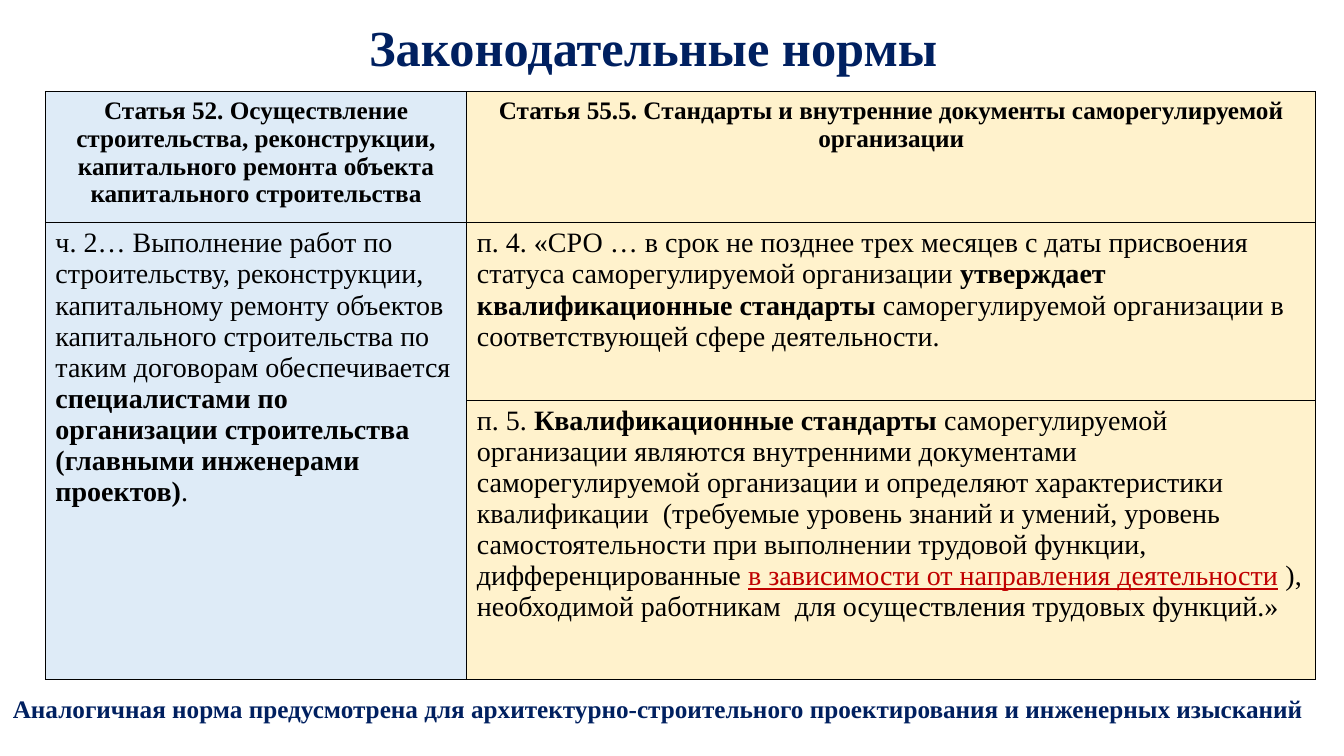
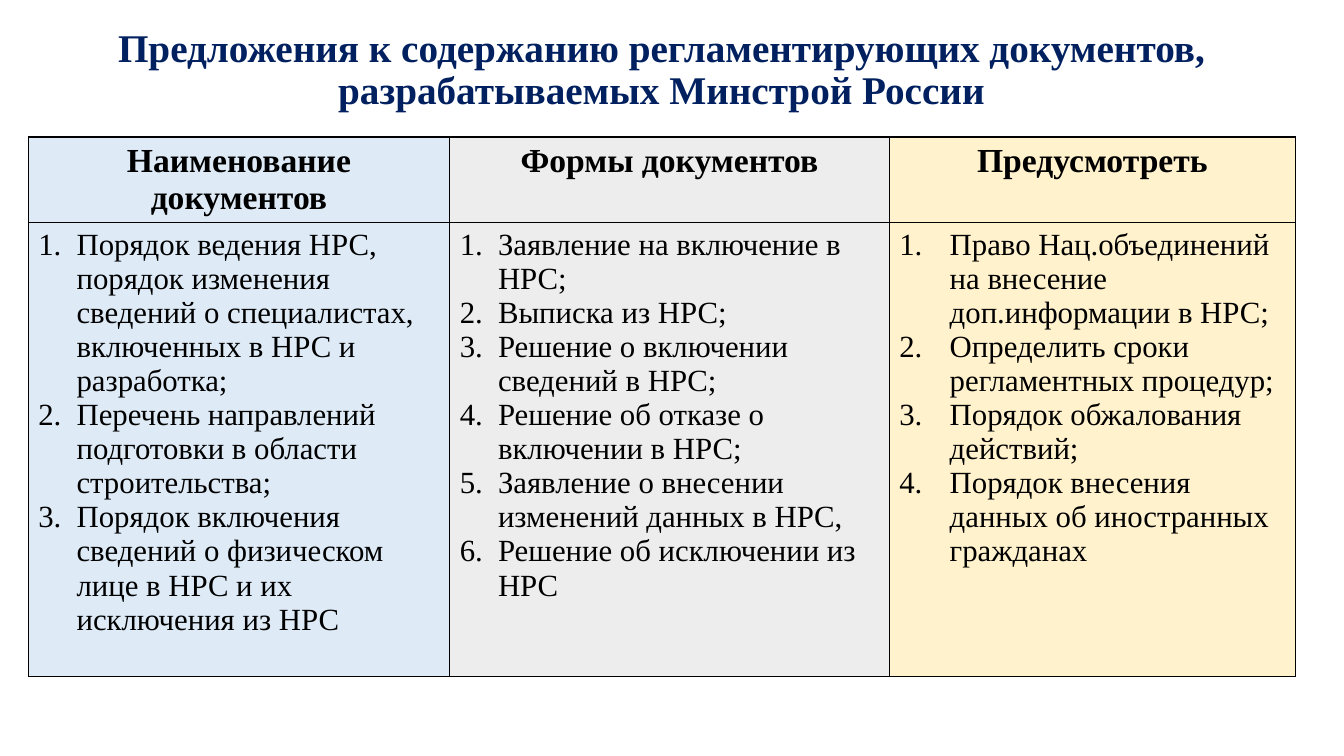
from lxml.etree import SubElement
from pptx import Presentation
from pptx.dml.color import RGBColor
from pptx.enum.text import MSO_ANCHOR, MSO_AUTO_SIZE, PP_ALIGN
from pptx.oxml.ns import qn
from pptx.util import Inches, Pt

COLORS = {
    "navy": "002060",
    "black": "000000",
    "red": "C00000",
    "blue": "DEEBF7",
    "gray": "EDEDED",
    "yellow": "FFF2CC",
}
FONT = "Times New Roman"


class Deck:
    """Holds the shared style and the current slide."""

    def __init__(self):
        self.presentation = Presentation()
        self.presentation.slide_width = Inches(13.33)
        self.presentation.slide_height = Inches(7.5)
        self.slide = None

    def add_run(self, paragraph, text, size, color="black", bold=False, underline=False):
        run = paragraph.add_run()
        run.text = text
        font = run.font
        font.name, font.size = FONT, Pt(size)
        font.bold, font.underline = bold, underline
        font.color.rgb = RGBColor.from_string(COLORS[color])

    def new_slide(self, title, left, top, size):
        self.slide = self.presentation.slides.add_slide(self.presentation.slide_layouts[5])
        shape = self.slide.shapes.title
        shape.left, shape.top = Inches(left), Inches(top)
        shape.width, shape.height = Inches(11.5), Inches(0.47)
        frame = shape.text_frame
        frame.auto_size = MSO_AUTO_SIZE.NONE
        frame.vertical_anchor = MSO_ANCHOR.BOTTOM
        paragraph = frame.paragraphs[0]
        paragraph.alignment = PP_ALIGN.CENTER
        paragraph.line_spacing = 0.9
        self.add_run(paragraph, title, size, "navy", bold=True)

    def add_note_line(self, text, left, top, width, height):
        shape = self.slide.shapes.add_textbox(
            Inches(left), Inches(top), Inches(width), Inches(height))
        shape.text_frame.word_wrap = True
        paragraph = shape.text_frame.paragraphs[0]
        paragraph.alignment = PP_ALIGN.CENTER
        self.add_run(paragraph, text, 18, "navy", bold=True)

    def add_table(self, left, top, widths, heights, fills):
        """Add a bordered table with one fill per column."""
        table = self.slide.shapes.add_table(
            len(heights), len(widths), Inches(left), Inches(top),
            Inches(sum(widths)), Inches(sum(heights))).table
        table.first_row = table.horz_banding = False
        for column, width in zip(table.columns, widths):
            column.width = Inches(width)
        for row, height in zip(table.rows, heights):
            row.height = Inches(height)
            for cell, fill in zip(row.cells, fills):
                self.add_borders(cell)
                cell.fill.solid()
                cell.fill.fore_color.rgb = RGBColor.from_string(COLORS[fill])
        return table

    def add_borders(self, cell):
        properties = cell._tc.get_or_add_tcPr()
        for side in ("lnL", "lnR", "lnT", "lnB"):
            line = SubElement(properties, qn(f"a:{side}"), w=str(Pt(1)))
            fill = SubElement(line, qn("a:solidFill"))
            SubElement(fill, qn("a:srgbClr"), val=COLORS["black"])

    def fill_header(self, table, titles, size):
        for cell, title in zip(table.rows[0].cells, titles):
            paragraph = cell.text_frame.paragraphs[0]
            paragraph.alignment = PP_ALIGN.CENTER
            self.add_run(paragraph, title, size, bold=True)

    def fill_text(self, cell, runs, size):
        for text, style in runs:
            self.add_run(cell.text_frame.paragraphs[0], text, size, **style)

    def fill_list(self, cell, items, size, indent):
        """Write a numbered list with a hanging indent."""
        frame = cell.text_frame
        for index, item in enumerate(items):
            paragraph = frame.add_paragraph() if index else frame.paragraphs[0]
            properties = paragraph._p.get_or_add_pPr()
            properties.set("marL", str(Inches(indent)))
            properties.set("indent", str(-Inches(indent)))
            SubElement(properties, qn("a:buFont"), typeface=FONT)
            SubElement(properties, qn("a:buAutoNum"), type="arabicPeriod")
            self.add_run(paragraph, item, size)


def add_norms_slide(deck):
    plain, bold = {}, {"bold": True}
    deck.new_slide("Законодательные нормы", 0.73, 0.35, 36)
    deck.add_note_line(
        "Аналогичная норма предусмотрена для архитектурно-строительного "
        "проектирования и инженерных изысканий", 0, 6.83, 13.05, 0.4)
    table = deck.add_table(0.45, 0.91, [4.18, 8.42], [1.3, 1.76, 2.77], ["blue", "yellow"])
    table.cell(1, 0).merge(table.cell(2, 0))
    deck.fill_header(table, [
        "Статья 52. Осуществление строительства, реконструкции, капитального "
        "ремонта объекта капитального строительства",
        "Статья 55.5. Стандарты и внутренние документы саморегулируемой организации",
    ], 18)

    # Body cells, run by run
    deck.fill_text(table.cell(1, 0), [
        ("ч. 2… Выполнение работ по строительству, реконструкции, капитальному "
         "ремонту объектов капитального строительства по таким договорам "
         "обеспечивается ", plain),
        ("специалистами по организации строительства (главными инженерами проектов)", bold),
        (".", plain),
    ], 20)
    deck.fill_text(table.cell(1, 1), [
        ("п. 4. «СРО … в срок не позднее трех месяцев с даты присвоения статуса "
         "саморегулируемой организации ", plain),
        ("утверждает квалификационные стандарты", bold),
        (" саморегулируемой организации в соответствующей сфере деятельности.", plain),
    ], 20)
    deck.fill_text(table.cell(2, 1), [
        ("п. 5. ", plain),
        ("Квалификационные стандарты ", bold),
        ("саморегулируемой организации являются внутренними документами "
         "саморегулируемой организации и определяют характеристики "
         "квалификации  (требуемые уровень знаний и умений, уровень "
         "самостоятельности при выполнении трудовой функции, "
         "дифференцированные ", plain),
        ("в зависимости от направления деятельности", {"color": "red", "underline": True}),
        (" ), необходимой работникам  для осуществления трудовых функций.»", plain),
    ], 20)


def add_proposals_slide(deck):
    deck.new_slide(
        "Предложения к содержанию регламентирующих документов, "
        "разрабатываемых Минстрой России", 0.81, 0.7, 28)
    table = deck.add_table(
        0.28, 1.36, [4.18, 4.36, 4.03], [0.85, 4.5], ["blue", "gray", "yellow"])
    deck.fill_header(
        table, ["Наименование документов", "Формы документов", "Предусмотреть"], 24)

    # One numbered list per column, with its indent
    lists = [
        (0.38, [
            "Порядок ведения НРС, порядок изменения сведений о специалистах, "
            "включенных в НРС и разработка;",
            "Перечень направлений подготовки в области строительства;",
            "Порядок включения сведений о физическом лице в НРС и их исключения из НРС",
        ]),
        (0.38, [
            "Заявление на включение в НРС;",
            "Выписка из НРС;",
            "Решение о включении сведений в НРС;",
            "Решение об отказе о включении в НРС;",
            "Заявление о внесении изменений данных в НРС,",
            "Решение об исключении из НРС",
        ]),
        (0.5, [
            "Право Нац.объединений на внесение доп.информации в НРС;",
            "Определить сроки регламентных процедур;",
            "Порядок обжалования действий;",
            "Порядок внесения данных об иностранных гражданах",
        ]),
    ]
    for cell, (indent, items) in zip(table.rows[1].cells, lists):
        deck.fill_list(cell, items, 22, indent)


def main():
    deck = Deck()
    add_norms_slide(deck)
    add_proposals_slide(deck)
    deck.presentation.save("out.pptx")


if __name__ == "__main__":
    main()
